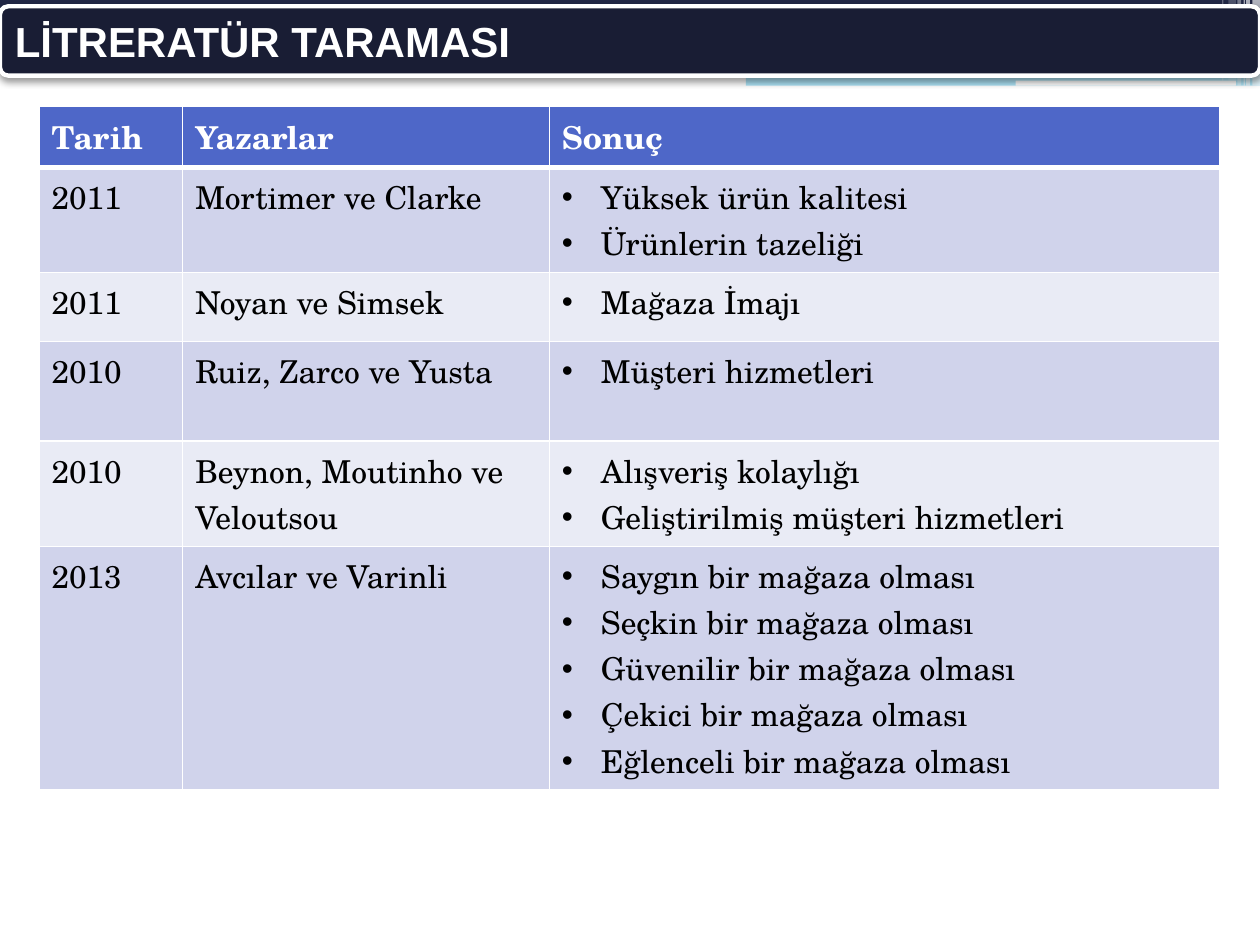
import pptx
import pptx.dml.color
import pptx.enum.shapes
import pptx.enum.text
import pptx.oxml
import pptx.oxml.ns
import pptx.util
from lxml import etree

Inches, Pt = pptx.util.Inches, pptx.util.Pt
RGBColor = pptx.dml.color.RGBColor
SHAPE = pptx.enum.shapes.MSO_SHAPE
qn = pptx.oxml.ns.qn

WHITE = RGBColor(0xFF, 0xFF, 0xFF)
BLACK = RGBColor(0, 0, 0)
NAVY = RGBColor(0x21, 0x27, 0x45)
DARK = RGBColor(0x19, 0x1D, 0x34)
CYAN = RGBColor(0x5E, 0xCC, 0xF3)
BLUE = RGBColor(0x4E, 0x67, 0xC8)
BANDS = [RGBColor(0xD0, 0xD3, 0xEB), RGBColor(0xE9, 0xEB, 0xF5)]

# left, top, width, height, colour, opacity in percent
BARS = [
    (0, 0.4, 10, 0.09, CYAN, 50),
    (0, 0, 10, 0.34, NAVY, 100),
    (0, 0.34, 10, 0.1, CYAN, 100),
    (5.92, 0.39, 4.08, 0.1, CYAN, 100),
    (5.92, 0.48, 4.08, 0.2, CYAN, 50),
]
# left, width, height, opacity of the thin stripes at the right edge
STRIPES = [
    (9.94, 0.06, 0.68, 65), (9.89, 0.03, 0.68, 65), (9.87, 0.01, 0.68, 60),
    (9.82, 0.03, 0.68, 40), (9.75, 0.06, 0.64, 20), (9.7, 0.01, 0.64, 30),
]

HEADER = ["Tarih", "Yazarlar", "Sonuç"]
STUDIES = [
    ("2011", "Mortimer ve Clarke", ["Yüksek ürün kalitesi", "Ürünlerin tazeliği"]),
    ("2011", "Noyan ve Simsek", ["Mağaza İmajı"]),
    ("2010", "Ruiz, Zarco ve Yusta", ["Müşteri hizmetleri"]),
    ("2010", "Beynon, Moutinho ve Veloutsou",
     ["Alışveriş kolaylığı", "Geliştirilmiş müşteri hizmetleri"]),
    ("2013", "Avcılar ve Varinli",
     ["Saygın bir mağaza olması", "Seçkin bir mağaza olması",
      "Güvenilir bir mağaza olması", "Çekici bir mağaza olması",
      "Eğlenceli bir mağaza olması"]),
]
COL_WIDTHS = [1.14, 2.91, 5.32]
ROW_HEIGHTS = [0.42, 0.81, 0.55, 0.79, 0.79, 0.79]


def add_text(p, text, color, **font):
    r = p.add_run()
    r.text = text
    for name, value in font.items():
        setattr(r.font, name, value)
    r.font.color.rgb = color


def add_bar(s, left, top, width, height, color, opacity=100, kind=SHAPE.RECTANGLE):
    sp = s.shapes.add_shape(kind, Inches(left), Inches(top), Inches(width), Inches(height))
    sp.shadow.inherit = False
    sp.fill.solid()
    sp.fill.fore_color.rgb = color
    sp.line.fill.background()
    if opacity < 100:
        clr = sp.fill._xPr.find(qn("a:solidFill"))[0]
        etree.SubElement(clr, qn("a:alpha"), val=str(opacity * 1000))
    return sp


def add_shadow(sp):
    effects = sp._element.spPr.find(qn("a:effectLst"))
    shadow = etree.SubElement(effects, qn("a:outerShdw"), blurRad=str(Pt(4.1)),
                              dist=str(Pt(2)), dir="5400000", rotWithShape="0")
    clr = etree.SubElement(shadow, qn("a:srgbClr"), val=str(BLACK))
    etree.SubElement(clr, qn("a:alpha"), val="40000")


def add_title(s, text):
    sp = add_bar(s, 0, 0.05, 10, 0.55, DARK, kind=SHAPE.ROUNDED_RECTANGLE)
    sp.adjustments[0] = 0.12
    sp.line.color.rgb = WHITE
    sp.line.width = Pt(2.5)
    add_shadow(sp)
    tf = sp.text_frame
    tf.word_wrap = True
    tf.vertical_anchor = pptx.enum.text.MSO_ANCHOR.MIDDLE
    p = tf.paragraphs[0]
    p.alignment = pptx.enum.text.PP_ALIGN.LEFT
    add_text(p, text, WHITE, name="Arial", size=Pt(24), bold=True)


def add_bullet(p):
    pPr = p._p.get_or_add_pPr()
    pPr.set("marL", str(Inches(0.31)))
    pPr.set("indent", str(-Inches(0.31)))
    etree.SubElement(pPr, qn("a:buFont"), typeface="Arial")
    etree.SubElement(pPr, qn("a:buChar"), char="•")


def set_borders(cell, bottom):
    tcPr = cell._tc.get_or_add_tcPr()
    for side, width in {"L": 1, "R": 1, "T": 1, "B": bottom}.items():
        ln = etree.SubElement(tcPr, qn(f"a:ln{side}"), w=str(Pt(width)))
        fill = etree.SubElement(ln, qn("a:solidFill"))
        etree.SubElement(fill, qn("a:srgbClr"), val=str(WHITE))


def fill_cell(cell, content, fill, color, bold, bottom):
    set_borders(cell, bottom)
    cell.fill.solid()
    cell.fill.fore_color.rgb = fill
    bulleted = isinstance(content, list)
    tf = cell.text_frame
    for i, text in enumerate(content if bulleted else [content]):
        p = tf.add_paragraph() if i else tf.paragraphs[0]
        if bulleted:
            add_bullet(p)
        add_text(p, text, color, name="TeX Gyre Schola", size=Pt(18), bold=bold)


def add_studies_table(s):
    table = s.shapes.add_table(
        len(ROW_HEIGHTS), len(COL_WIDTHS), Inches(0.31), Inches(0.84),
        Inches(sum(COL_WIDTHS)), Inches(sum(ROW_HEIGHTS))).table
    for col, width in zip(table.columns, COL_WIDTHS):
        col.width = Inches(width)
    for row, height in zip(table.rows, ROW_HEIGHTS):
        row.height = Inches(height)
    for i, record in enumerate([HEADER] + STUDIES):
        if i == 0:
            style = dict(fill=BLUE, color=WHITE, bold=True, bottom=3)
        else:
            style = dict(fill=BANDS[(i - 1) % 2], color=BLACK, bold=False, bottom=1)
        for j, content in enumerate(record):
            fill_cell(table.cell(i, j), content, **style)
            if i == 1:  # share the thick line under the header
                top = table.cell(i, j)._tc.tcPr.find(qn("a:lnT"))
                top.set("w", str(Pt(3)))


def main():
    prs = pptx.Presentation()
    prs.slide_width, prs.slide_height = Inches(10), Inches(7.5)
    s = prs.slides.add_slide(prs.slide_layouts[6])

    # Decorative bands behind the title
    for bar in BARS:
        add_bar(s, *bar)
    add_bar(s, 8.06, 0.64, 1.75, 0.04, WHITE, kind=SHAPE.ROUNDED_RECTANGLE)
    for left, width, height, opacity in STRIPES:
        add_bar(s, left, 0, width, height, WHITE, opacity)

    # Title and table
    add_title(s, "LİTRERATÜR TARAMASI")
    add_studies_table(s)
    prs.save("out.pptx")


if __name__ == "__main__":
    main()
